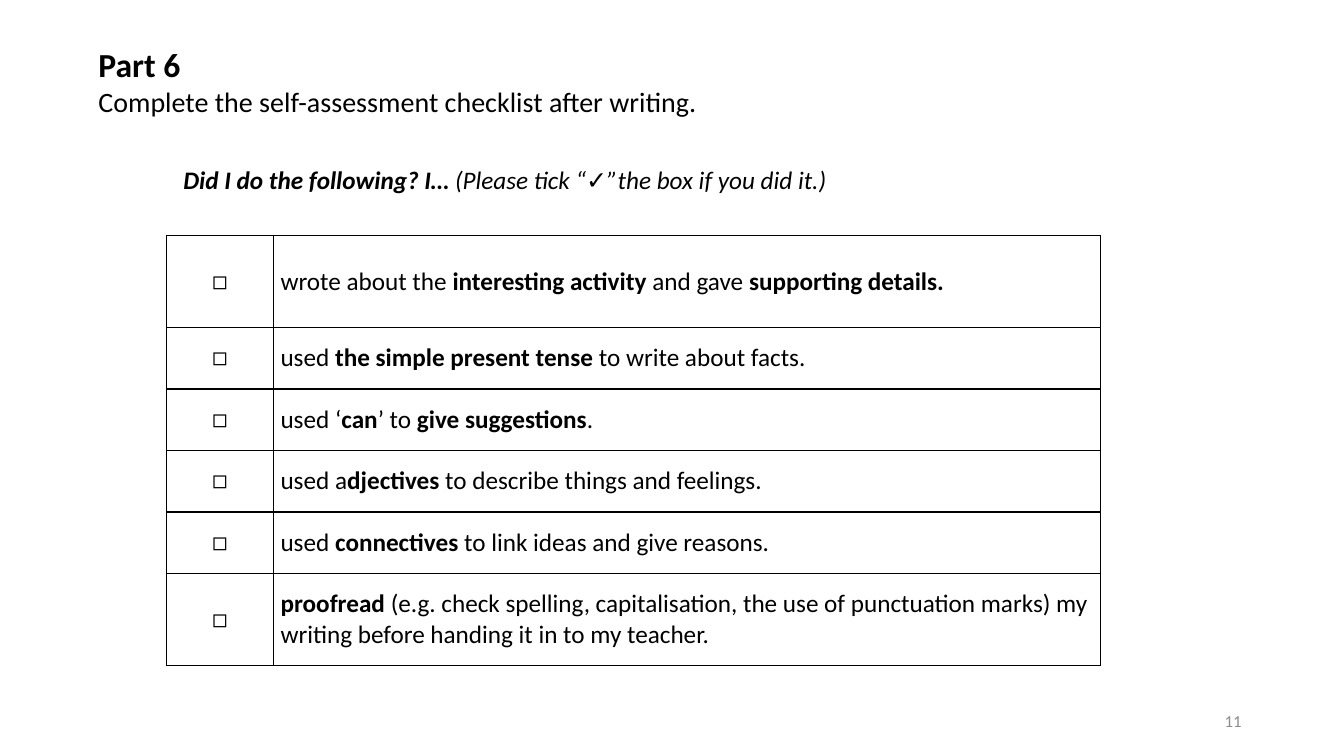
from lxml.etree import SubElement
from pptx import Presentation
from pptx.dml.color import RGBColor
from pptx.enum.text import MSO_ANCHOR as Anchor, PP_ALIGN as Align
from pptx.oxml.ns import qn
from pptx.util import Cm, Pt

INK, GREY = "000000", "8C8C8C"
CHECKLIST = [
    "wrote about the *interesting activity* and gave *supporting details. *",
    "used *the simple present tense* to write about facts.",
    "used ‘*can*’ to *give suggestions*.",
    "used a*djectives* to describe things and feelings.",
    "used *connectives* to link ideas and give reasons.",
    "*proofread* (e.g. check spelling, capitalisation, the use of punctuation "
    "marks) my writing before handing it in to my teacher.",
]
TALL, SHORT = 2.32, 1.55
ROW_HEIGHTS = [TALL, SHORT, SHORT, SHORT, SHORT, TALL]
TICK_WIDTH = 2.69
LINE_PITCH = Pt(22)


def colour(code):
    return RGBColor.from_string(code)


def apply(target, values):
    for name, value in values.items():
        setattr(target, name, value)


def write(paragraph, marked, size, ink=INK, italic=False, **layout):
    apply(paragraph, layout)
    for index, piece in enumerate(marked.split("*")):
        if piece:
            run = paragraph.add_run()
            run.text = piece
            apply(run.font, {"name": "Calibri", "size": Pt(size),
                             "bold": index % 2 == 1, "italic": italic})
            run.font.color.rgb = colour(ink)


def add_frame(slide, box, anchor=Anchor.TOP):
    frame = slide.shapes.add_textbox(*map(Cm, box)).text_frame
    apply(frame, {"word_wrap": True, "vertical_anchor": anchor})
    return frame


def add_page_number(slide, box):
    number = add_frame(slide, box, Anchor.MIDDLE)
    write(number.paragraphs[0], "11", 12, GREY, alignment=Align.RIGHT)


def add_heading(slide, box):
    heading = add_frame(slide, box)
    write(heading.paragraphs[0], "*Part 6*", 24)
    write(heading.add_paragraph(),
          "Complete the self-assessment checklist after writing.", 20)


def add_prompt(slide, box):
    prompt = add_frame(slide, box)
    write(prompt.paragraphs[0],
          "*Did I do the following? I… *(Please tick “✓”the box if you did it.)",
          18, italic=True)


def format_cell(cell):
    apply(cell, {"vertical_anchor": Anchor.MIDDLE,
                 "margin_left": Cm(0.18), "margin_right": Cm(0.18),
                 "margin_top": 0, "margin_bottom": 0})
    properties = cell._tc.get_or_add_tcPr()
    for side in ("lnL", "lnR", "lnT", "lnB"):
        border = SubElement(properties, qn(f"a:{side}"), w=str(Pt(1)))
        fill = SubElement(border, qn("a:solidFill"))
        SubElement(fill, qn("a:srgbClr"), val=INK)
    cell.fill.background()


def add_checklist(slide, box):
    checklist = slide.shapes.add_table(len(CHECKLIST), 2, *map(Cm, box)).table
    apply(checklist, {"first_row": False, "horz_banding": False})
    checklist.columns[0].width = Cm(TICK_WIDTH)
    checklist.columns[1].width = Cm(box[2] - TICK_WIDTH)
    for index, (statement, height) in enumerate(zip(CHECKLIST, ROW_HEIGHTS)):
        checklist.rows[index].height = Cm(height)
        tick, claim = checklist.cell(index, 0), checklist.cell(index, 1)
        format_cell(tick)
        format_cell(claim)
        write(tick.text_frame.paragraphs[0], "◻", 18,
              alignment=Align.CENTER, line_spacing=LINE_PITCH)
        write(claim.text_frame.paragraphs[0], statement, 18,
              alignment=Align.LEFT if index else Align.JUSTIFY,
              line_spacing=LINE_PITCH)


def main():
    deck = Presentation()
    apply(deck, {"slide_width": Cm(33.87), "slide_height": Cm(19.05)})
    slide = deck.slides.add_slide(deck.slide_layouts[6])
    add_page_number(slide, (23.92, 17.66, 7.62, 1.01))
    add_heading(slide, (2.23, 0.98, 16.94, 2.13))
    add_prompt(slide, (4.37, 4.02, 19.84, 1.03))
    add_checklist(slide, (4.2, 5.93, 23.54, sum(ROW_HEIGHTS)))
    deck.save("out.pptx")


if __name__ == "__main__":
    main()
